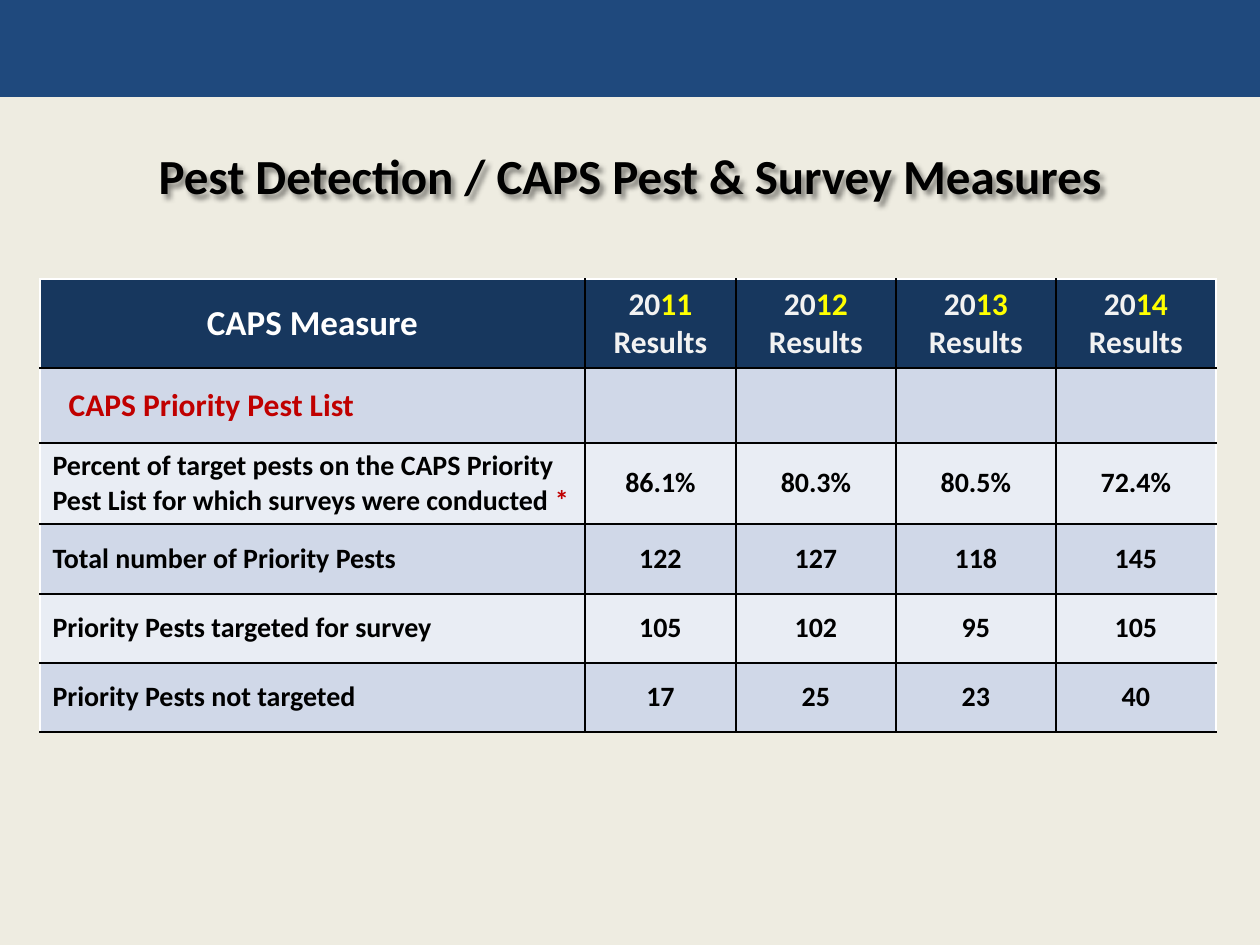
from lxml import etree
from pptx import Presentation
from pptx.dml.color import RGBColor
from pptx.enum.shapes import MSO_SHAPE
from pptx.enum.text import MSO_ANCHOR, PP_ALIGN
from pptx.oxml import parse_xml
from pptx.oxml.ns import nsdecls, qn
from pptx.util import Pt

RECTANGLE = MSO_SHAPE.RECTANGLE
MIDDLE = MSO_ANCHOR.MIDDLE
LEFT, CENTER = PP_ALIGN.LEFT, PP_ALIGN.CENTER

EMU_PER_PX = 914400 / 126
FONT = "Calibri"
COLORS = {
    "background": "EEECE1",
    "band": "1F497D",
    "header": "17375E",
    "row_dark": "D0D8E8",
    "row_light": "E9EDF4",
    "black": "000000",
    "white": "FFFFFF",
    "pale": "F2F2F2",
    "yellow": "FFFF00",
    "red": "C00000",
}


def px(length):
    return round(length * EMU_PER_PX)


def color(name):
    return RGBColor.from_string(COLORS[name])


class SlideBuilder:
    """Holds the style and the current slide."""

    def __init__(self, slide):
        self.slide = slide
        slide.background.fill.solid()
        slide.background.fill.fore_color.rgb = color("background")

    def rectangle(self, left, top, width, height, fill):
        shape = self.slide.shapes.add_shape(
            RECTANGLE, px(left), px(top), px(width), px(height))
        shape.shadow.inherit = False
        shape.fill.solid()
        shape.fill.fore_color.rgb = color(fill)
        shape.line.fill.background()

    def add_runs(self, text_frame, runs, size, alignment):
        """Add (text, color) runs to the first paragraph."""
        paragraph = text_frame.paragraphs[0]
        paragraph.alignment = alignment
        for text, color_name in runs:
            run = paragraph.add_run()
            run.text = text
            run.font.name = FONT
            run.font.size = Pt(size)
            run.font.bold = True
            run.font.color.rgb = color(color_name)
        return paragraph

    def title(self, left, top, width, height, text, size):
        shape = self.slide.shapes.add_textbox(
            px(left), px(top), px(width), px(height))
        frame = shape.text_frame
        frame.word_wrap = True
        frame.vertical_anchor = MIDDLE
        self.add_runs(frame, [(text, "black")], size, CENTER)
        # Soft shadow behind the letters
        shape._element.spPr.append(parse_xml(
            f'<a:effectLst {nsdecls("a")}><a:outerShdw blurRad="38100" '
            'dist="38100" dir="2700000" algn="tl"><a:srgbClr val="000000">'
            '<a:alpha val="43000"/></a:srgbClr></a:outerShdw></a:effectLst>'))

    def table(self, left, top, widths, heights):
        frame = self.slide.shapes.add_table(
            len(heights), len(widths), px(left), px(top),
            px(sum(widths)), px(sum(heights)))
        table = frame.table
        for column, width in zip(table.columns, widths):
            column.width = px(width)
        for row, height in zip(table.rows, heights):
            row.height = px(height)
        return table

    def borders(self, cell, sides):
        properties = cell._tc.get_or_add_tcPr()
        for side, color_name in sides.items():
            line = etree.SubElement(properties, qn(f"a:ln{side}"), w="12700")
            fill = etree.SubElement(line, qn("a:solidFill"))
            etree.SubElement(fill, qn("a:srgbClr"), val=COLORS[color_name])

    def cell(self, cell, runs, size, fill, sides, alignment=CENTER, indent=0):
        self.borders(cell, sides)
        cell.fill.solid()
        cell.fill.fore_color.rgb = color(fill)
        cell.vertical_anchor = MIDDLE
        paragraph = self.add_runs(cell.text_frame, runs, size, alignment)
        if indent:
            paragraph._p.get_or_add_pPr().set("marL", str(px(indent)))


def result_table(builder):
    years = ["11", "12", "13", "14"]
    measures = [
        ([("CAPS Priority Pest List", "red")], [""] * 4),
        ([("Percent of target pests on the CAPS Priority Pest List "
           "for which surveys were conducted ", "black"), ("*", "red")],
         ["86.1%", "80.3%", "80.5%", "72.4%"]),
        ([("Total number of Priority Pests", "black")],
         ["122", "127", "118", "145"]),
        ([("Priority Pests targeted for survey", "black")],
         ["105", "102", "95", "105"]),
        ([("Priority Pests not targeted", "black")],
         ["17", "25", "23", "40"]),
    ]
    widths = [545, 151, 160, 160, 160]
    table = builder.table(40, 279, widths, [89, 75, 81, 70, 69, 69])

    def sides(row, column):
        """White on the outer left, top and right, black elsewhere."""
        return {
            "L": "white" if column == 0 else "black",
            "R": "white" if column == len(years) else "black",
            "T": "white" if row == 0 else "black",
            "B": "black",
        }

    # Header row
    builder.cell(table.cell(0, 0), [("CAPS Measure", "white")], 20,
                 "header", sides(0, 0))
    for column, year in enumerate(years, 1):
        runs = [("20", "pale"), (f"{year} ", "yellow"), ("Results", "pale")]
        builder.cell(table.cell(0, column), runs, 18, "header",
                     sides(0, column))

    # Measures, in alternating bands
    for row, (label, values) in enumerate(measures, 1):
        fill = "row_dark" if row % 2 else "row_light"
        is_section = row == 1
        builder.cell(table.cell(row, 0), label, 18 if is_section else 16,
                     fill, sides(row, 0), LEFT, 16 if is_section else 0)
        for column, value in enumerate(values, 1):
            cell = table.cell(row, column)
            cell.margin_left = cell.margin_right = 0
            cell.margin_top = cell.margin_bottom = 0
            runs = [(value, "black")] if value else []
            builder.cell(cell, runs, 16, fill, sides(row, column))


def main():
    presentation = Presentation()
    presentation.slide_width = px(1260)
    presentation.slide_height = px(945)
    blank = presentation.slide_layouts[6]
    builder = SlideBuilder(presentation.slides.add_slide(blank))

    # Top band and title
    builder.rectangle(0, 0, 1260, 97, "band")
    builder.title(63, 126, 1134, 98,
                  "Pest Detection / CAPS Pest & Survey Measures", 28)

    # Results by year
    result_table(builder)
    presentation.save("out.pptx")


if __name__ == "__main__":
    main()
